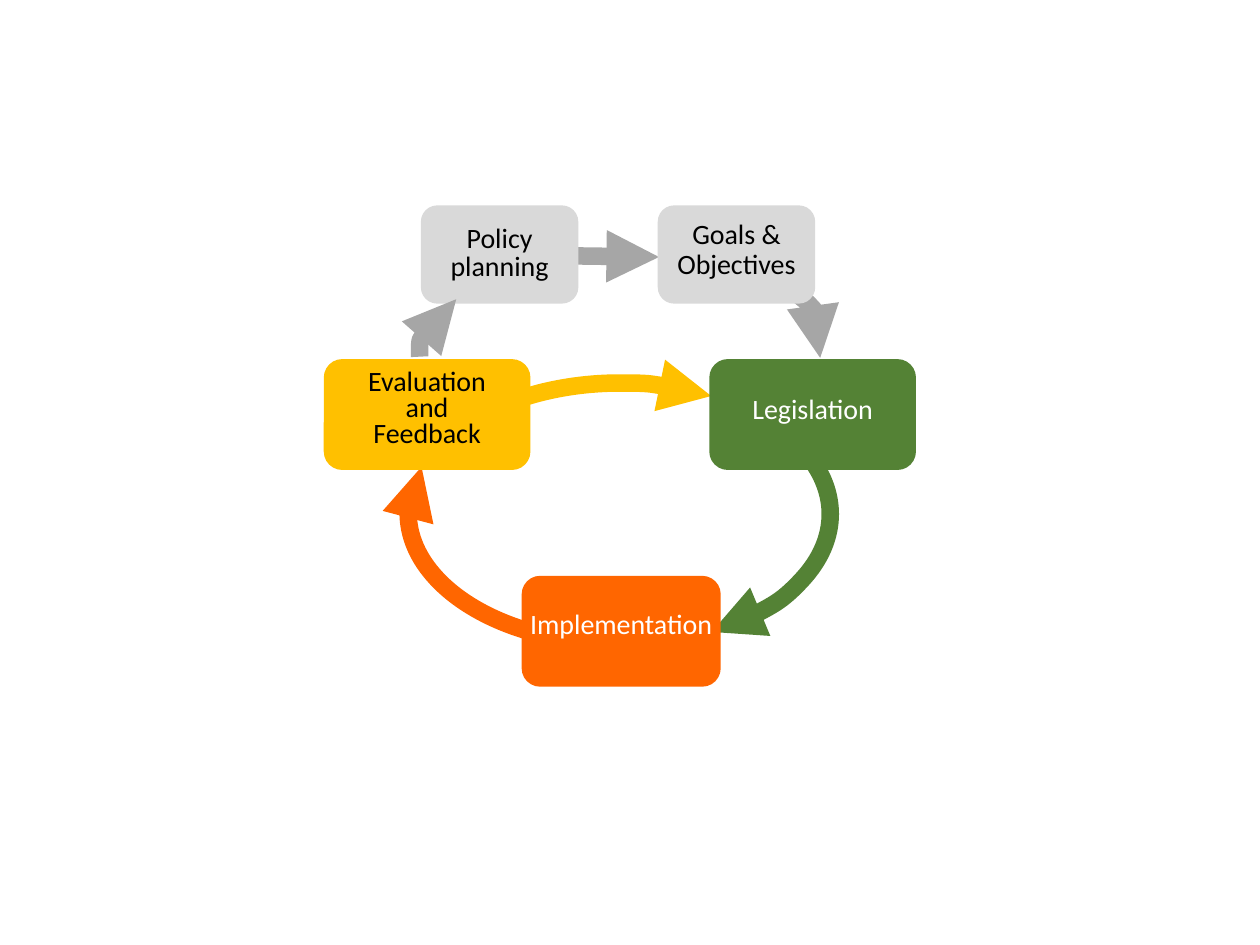
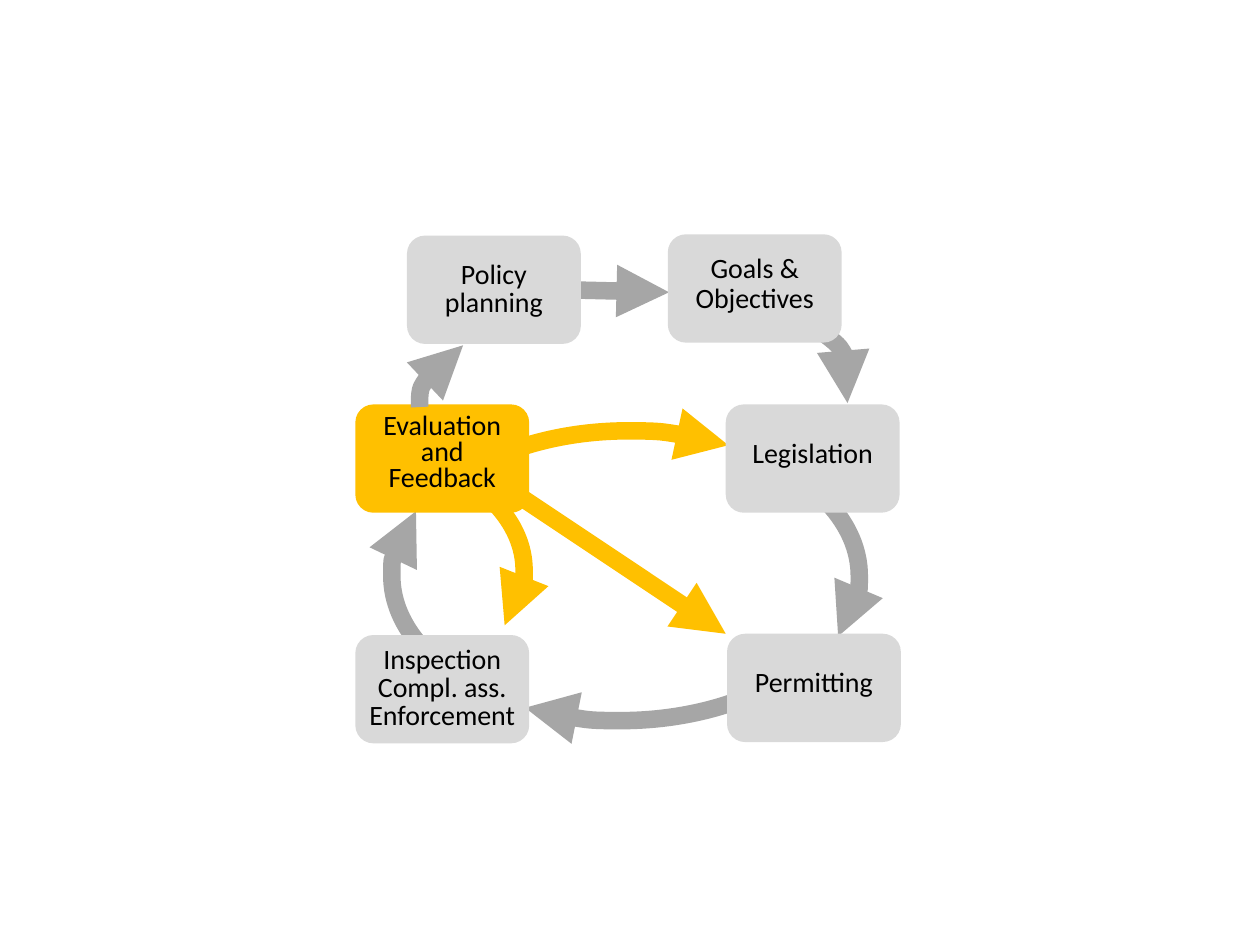
import dataclasses

import lxml.etree
import pptx
import pptx.dml.color
import pptx.enum.shapes
import pptx.enum.text
import pptx.oxml.ns
import pptx.util

SHAPES = pptx.enum.shapes.MSO_SHAPE


@dataclasses.dataclass(frozen=True)
class Theme:
    font: str = "Calibri"
    text_size: float = 16
    arrow_width: float = 10
    paragraph_gap: float = 5
    black: str = "000000"
    white: str = "FFFFFF"
    box_gray: str = "D9D9D9"
    arrow_gray: str = "A6A6A6"
    yellow: str = "FFC000"
    green: str = "548235"
    orange: str = "FF6600"


def set_all(target, values):
    """Set every attribute named in a dict of format values."""
    for name, value in values.items():
        setattr(target, name, value)


def color(value):
    return pptx.dml.color.RGBColor.from_string(value)


class Diagram:
    """Draws on the current slide; lengths are cells of a 100 by 75 grid."""

    columns, rows = 100, 75

    def __init__(self, theme):
        self.theme = theme
        self.presentation = pptx.Presentation()
        set_all(self.presentation, {
            "slide_width": pptx.util.Inches(10),
            "slide_height": pptx.util.Inches(7.5),
        })
        self.slide = None

    def add_slide(self):
        blank = self.presentation.slide_layouts[6]
        self.slide = self.presentation.slides.add_slide(blank)

    def place(self, column, row):
        return (round(column * self.presentation.slide_width / self.columns),
                round(row * self.presentation.slide_height / self.rows))

    def add_preset(self, kind, position, size):
        shape = self.slide.shapes.add_shape(
            kind, *self.place(*position), *self.place(*size))
        shape.shadow.inherit = False
        return shape

    def style_arrow(self, shape, line_color):
        shape.line.color.rgb = color(line_color)
        shape.line.width = pptx.util.Pt(self.theme.arrow_width)
        line = shape.element.spPr.find(pptx.oxml.ns.qn("a:ln"))
        lxml.etree.SubElement(
            line, pptx.oxml.ns.qn("a:tailEnd"), type="triangle")

    def box(self, text, position, size, fill, text_color=None,
            spacing=12, gap=None, inset=(0.4, 0)):
        shape = self.add_preset(SHAPES.ROUNDED_RECTANGLE, position, size)
        shape.fill.solid()
        shape.fill.fore_color.rgb = color(fill)
        shape.line.fill.background()
        side, top = self.place(*inset)
        frame = shape.text_frame
        set_all(frame, {
            "word_wrap": True,
            "vertical_anchor": pptx.enum.text.MSO_ANCHOR.MIDDLE,
            "margin_left": side, "margin_right": side,
            "margin_top": top, "margin_bottom": top,
        })
        gap = self.theme.paragraph_gap if gap is None else gap
        for index, words in enumerate(text.split("\n")):
            paragraph = (frame.add_paragraph() if index
                         else frame.paragraphs[0])
            set_all(paragraph, {
                "alignment": pptx.enum.text.PP_ALIGN.CENTER,
                "line_spacing": pptx.util.Pt(spacing),
                "space_before": pptx.util.Pt(gap),
            })
            run = paragraph.add_run()
            run.text = words
            set_all(run.font, {
                "name": self.theme.font,
                "size": pptx.util.Pt(self.theme.text_size),
            })
            run.font.color.rgb = color(text_color or self.theme.black)

    def arc_arrow(self, position, size, start, end, line_color):
        """Arrow along an ellipse, angles in degrees clockwise from the right."""
        shape = self.add_preset(SHAPES.ARC, position, size)
        shape.fill.background()
        for index, angle in enumerate((start, end)):
            shape.adjustments[index] = angle * 0.6
        self.style_arrow(shape, line_color)

    def straight_arrow(self, start, end, line_color):
        connector = self.slide.shapes.add_connector(
            pptx.enum.shapes.MSO_CONNECTOR.STRAIGHT,
            *self.place(*start), *self.place(*end))
        self.style_arrow(connector, line_color)
        lxml.etree.SubElement(
            connector.element.spPr, pptx.oxml.ns.qn("a:effectLst"))

    def curve_arrow(self, controls, line_color, steps=24):
        """Arrow along a cubic curve with four control points."""
        points = []
        for step in range(steps + 1):
            t = step / steps
            weights = ((1 - t) ** 3, 3 * t * (1 - t) ** 2,
                       3 * t ** 2 * (1 - t), t ** 3)
            points.append(self.place(*(
                sum(weight * value for weight, value in zip(weights, axis))
                for axis in zip(*controls))))
        builder = self.slide.shapes.build_freeform(*points[0])
        builder.add_line_segments(points[1:], close=False)
        shape = builder.convert_to_shape()
        shape.shadow.inherit = False
        shape.fill.background()
        self.style_arrow(shape, line_color)


def build_policy_cycle(diagram):
    theme = diagram.theme
    diagram.add_slide()
    ring = (33.4, 20.8)
    small, large = (12.5, 7.8), (16.4, 8.8)

    # Arrows behind the boxes
    for position, start, end, line_color in (
            ((32.4, 30.3), 125.13, 193.12, theme.orange),
            ((32.5, 30.4), 342.8, 52.07, theme.green),
            ((32.5, 30.4), 230.37, 307.74, theme.yellow)):
        diagram.arc_arrow(position, ring, start, end, line_color)
    diagram.straight_arrow((44.9, 20.3), (52.3, 20.4), theme.arrow_gray)
    diagram.curve_arrow(
        ((56, 20.5), (63, 21.9), (66.8, 25.2), (65.1, 28.4)),
        theme.arrow_gray)

    # Stages of the cycle
    diagram.box("Goals &\nObjectives", (52.2, 16.3), small, theme.box_gray)
    diagram.box("Evaluation\nand\nFeedback", (25.7, 28.5), large,
                theme.yellow, spacing=10, inset=(0, 0))
    diagram.box("Policy planning", (33.4, 16.3), small, theme.box_gray,
                spacing=16, gap=0)
    diagram.box("Legislation", (56.3, 28.5), large, theme.green, theme.white)
    diagram.box("Implementation", (41.4, 45.7), (15.8, 8.8), theme.orange,
                theme.white, spacing=10, inset=(0, 0))

    # Feedback into planning, in front
    diagram.arc_arrow((33.3, 20.2), (36.1, 15.6), 179.01, 195.67,
                      theme.arrow_gray)


def build_regulatory_cycle(diagram):
    theme = diagram.theme
    diagram.add_slide()
    ring, upper_ring = (36.7, 23), (36.1, 15.6)
    size = (13.8, 8.6)
    narrow, padded = (0, 0.6), (0.4, 0.6)

    # Arrows behind the boxes
    diagram.straight_arrow((39.3, 38.1), (57.6, 50.3), theme.yellow)
    diagram.straight_arrow((45, 23), (53.1, 23.2), theme.arrow_gray)
    for position, ellipse, start, end, line_color in (
            ((31.5, 34.2), ring, 339.87, 16.07, theme.arrow_gray),
            ((30.9, 34.2), ring, 18.87, 125.84, theme.arrow_gray),
            ((31.1, 34.2), ring, 157.52, 197.3, theme.arrow_gray),
            ((31.6, 22.5), upper_ring, 316.86, 5.49, theme.arrow_gray),
            ((31.5, 34.2), ring, 205.84, 307.55, theme.yellow)):
        diagram.arc_arrow(position, ellipse, start, end, line_color)

    # Stages of the cycle
    for text, position, fill, spacing, gap, inset in (
            ("Goals &\nObjectives", (53, 18.6), theme.box_gray,
             12, None, padded),
            ("Permitting", (57.7, 50.3), theme.box_gray, 12, None, narrow),
            ("Inspection Compl. ass.\nEnforcement", (28.2, 50.4),
             theme.box_gray, 16, 0, (0, 0)),
            ("Policy planning", (32.3, 18.7), theme.box_gray,
             16, None, padded),
            ("Evaluation\nand\nFeedback", (28.2, 32.1), theme.yellow,
             10, None, narrow),
            ("Legislation", (57.6, 32.1), theme.box_gray, 12, None, padded)):
        diagram.box(text, position, size, fill, spacing=spacing, gap=gap,
                    inset=inset)

    # Feedback arrows in front
    diagram.arc_arrow((8.1, 34.8), (33.5, 20.9), 339.87, 16.07, theme.yellow)
    diagram.arc_arrow((33.3, 24.2), upper_ring, 179.01, 197.46,
                      theme.arrow_gray)


def main():
    diagram = Diagram(Theme())
    build_policy_cycle(diagram)
    build_regulatory_cycle(diagram)
    diagram.presentation.save("out.pptx")


if __name__ == "__main__":
    main()
